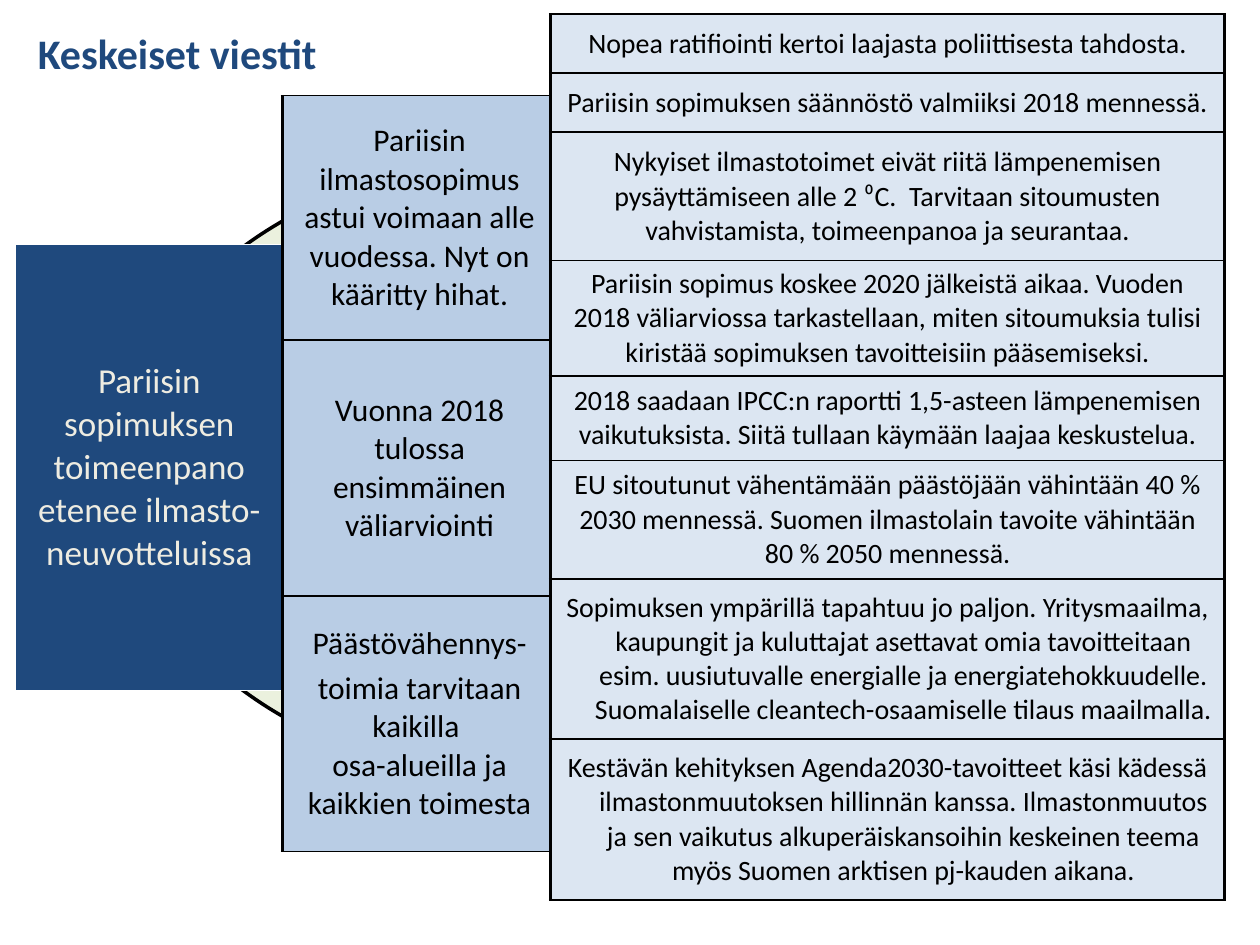
from lxml import etree
from pptx import Presentation
from pptx import util as u
from pptx.dml.color import RGBColor
from pptx.enum import shapes, text
from pptx.oxml.ns import qn

FONT = "Calibri"
NAVY, BLACK = "1F497D", "000000"
BORDERS = {"lnL": 2.25, "lnR": 2.25, "lnT": 1, "lnB": 1}

STEPS = [
    (1.94, ["Pariisin ilmastosopimus astui voimaan alle vuodessa. Nyt on kääritty hihat."]),
    (2.03, ["Vuonna 2018 tulossa ensimmäinen väliarviointi"]),
    (2.03, ["Päästövähennys-",
            "toimia tarvitaan kaikilla \nosa-alueilla ja kaikkien toimesta"]),
]
MESSAGES = [
    (0.47, ["Nopea ratifiointi kertoi laajasta poliittisesta tahdosta."]),
    (0.47, ["Pariisin sopimuksen säännöstö valmiiksi 2018 mennessä."]),
    (1.02, ["Nykyiset ilmastotoimet eivät riitä lämpenemisen pysäyttämiseen alle 2 ⁰C.  "
            "Tarvitaan sitoumusten vahvistamista, toimeenpanoa ja seurantaa."]),
    (0.91, ["Pariisin sopimus koskee 2020 jälkeistä aikaa. Vuoden 2018 väliarviossa "
            "tarkastellaan, miten sitoumuksia tulisi kiristää sopimuksen tavoitteisiin "
            "pääsemiseksi."]),
    (0.67, ["2018 saadaan IPCC:n raportti 1,5-asteen lämpenemisen vaikutuksista. "
            "Siitä tullaan käymään laajaa keskustelua."]),
    (0.94, ["EU sitoutunut vähentämään päästöjään vähintään 40 % 2030 mennessä. "
            "Suomen ilmastolain tavoite vähintään 80 % 2050 mennessä."]),
]
HANGING_MESSAGES = [
    (1.27, ["Sopimuksen ympärillä tapahtuu jo paljon. Yritysmaailma, kaupungit ja kuluttajat "
            "asettavat omia tavoitteitaan esim. uusiutuvalle energialle ja "
            "energiatehokkuudelle. Suomalaiselle cleantech-osaamiselle tilaus maailmalla."]),
    (1.28, ["Kestävän kehityksen Agenda2030-tavoitteet käsi kädessä ilmastonmuutoksen "
            "hillinnän kanssa. Ilmastonmuutos ja sen vaikutus alkuperäiskansoihin keskeinen "
            "teema myös Suomen arktisen pj-kauden aikana."]),
]


def rgb(value):
    return RGBColor.from_string(value)


def style_font(p, size, color, bold=False):
    p.font.name, p.font.size, p.font.bold = FONT, u.Pt(size), bold
    p.font.color.rgb = rgb(color)


def add_borders(cell):
    tc_pr = cell._tc.get_or_add_tcPr()
    for i, (side, width) in enumerate(BORDERS.items()):
        ln = etree.Element(qn(f"a:{side}"), w=str(u.Pt(width)))
        fill = etree.SubElement(ln, qn("a:solidFill"))
        etree.SubElement(fill, qn("a:srgbClr"), val=BLACK)
        tc_pr.insert(i, ln)


def hang(p, indent):
    p_pr = p._p.get_or_add_pPr()
    p_pr.set("marL", str(indent))
    p_pr.set("indent", str(-indent))


def add_title(slide, left, top, width, height):
    title = slide.shapes.title
    title.left, title.top, title.width, title.height = map(
        u.Inches, (left, top, width, height))
    tf = title.text_frame
    tf.text = "Keskeiset viestit"
    tf.vertical_anchor = text.MSO_ANCHOR.TOP
    p = tf.paragraphs[0]
    p.alignment = text.PP_ALIGN.LEFT
    style_font(p, 24, NAVY, bold=True)


def add_moon(slide, left, top, width, height):
    moon = slide.shapes.add_shape(
        shapes.MSO_SHAPE.MOON, *map(u.Inches, (left, top, width, height)))
    moon.adjustments[0] = 0.655
    moon.shadow.inherit = False
    moon.fill.solid()
    moon.fill.fore_color.rgb = rgb("EBF1DE")
    moon.line.color.rgb = rgb(BLACK)
    moon.line.width = u.Pt(2)


def add_column(slide, left, top, width, rows, fill, size, color=BLACK, bordered=True):
    """Add a one-column table from (height, paragraphs) rows and return it."""
    height = sum(h for h, _ in rows)
    table = slide.shapes.add_table(
        len(rows), 1, *map(u.Inches, (left, top, width, height))).table
    table.first_row = table.horz_banding = False
    for i, (row_height, paragraphs) in enumerate(rows):
        table.rows[i].height = u.Inches(row_height)
        cell = table.cell(i, 0)
        cell.vertical_anchor = text.MSO_ANCHOR.MIDDLE
        cell.fill.solid()
        cell.fill.fore_color.rgb = rgb(fill)
        if bordered:
            add_borders(cell)
        tf = cell.text_frame
        for j, words in enumerate(paragraphs):
            p = tf.add_paragraph() if j else tf.paragraphs[0]
            p.text = words
            p.alignment = text.PP_ALIGN.CENTER
            if len(paragraphs) > 1:
                p.space_before = u.Pt(0.2 * size)
            style_font(p, size, color)
    return table


def build_slide(prs):
    slide = prs.slides.add_slide(prs.slide_layouts[5])
    add_moon(slide, 0.94, 1.22, 3.41, 5)
    theme = "Pariisin sopimuksen toimeenpano etenee ilmasto-neuvotteluissa"
    add_column(slide, 0.12, 1.94, 2.13, [(3.54, [theme])], NAVY, 20, "EEECE1",
               bordered=False)
    add_column(slide, 2.24, 0.76, 2.18, STEPS, "B9CDE5", 18)
    messages = add_column(slide, 4.37, 0.11, 5.35, MESSAGES + HANGING_MESSAGES,
                          "DCE6F2", 16)
    for i in range(len(MESSAGES), len(messages.rows)):
        p = messages.cell(i, 0).text_frame.paragraphs[0]
        p.space_before = u.Pt(3.2)
        hang(p, u.Inches(0.25))
    add_title(slide, 0.2, 0.17, 3.7, 0.5)


def main():
    prs = Presentation()
    prs.slide_width, prs.slide_height = u.Inches(10), u.Inches(7.5)
    build_slide(prs)
    prs.save("out.pptx")


if __name__ == "__main__":
    main()
